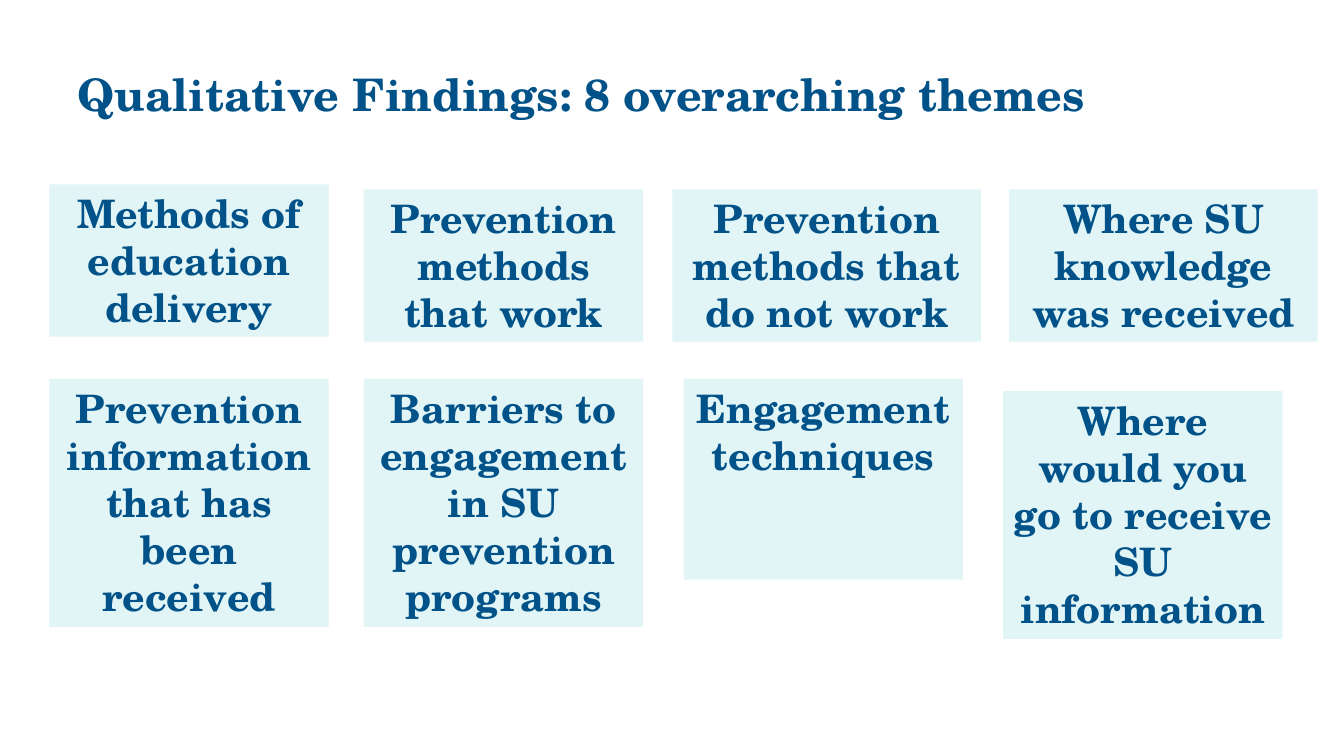
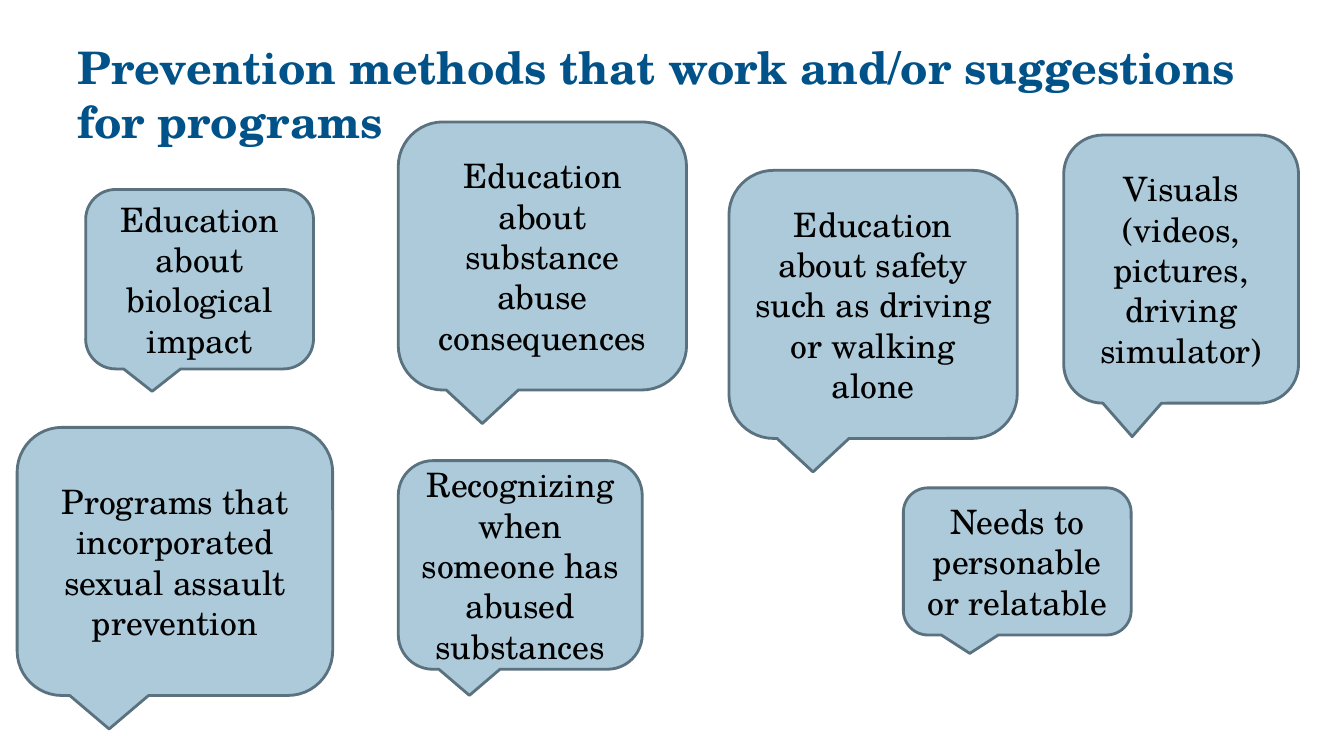
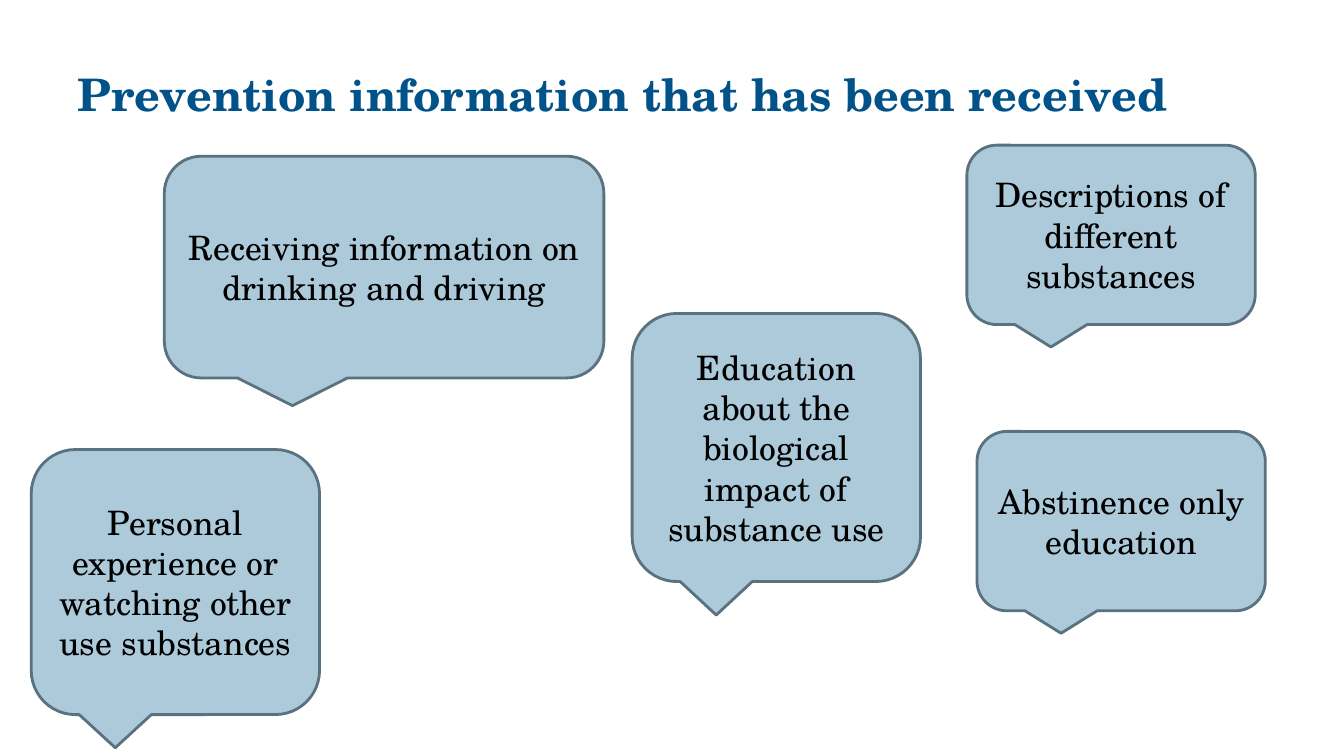
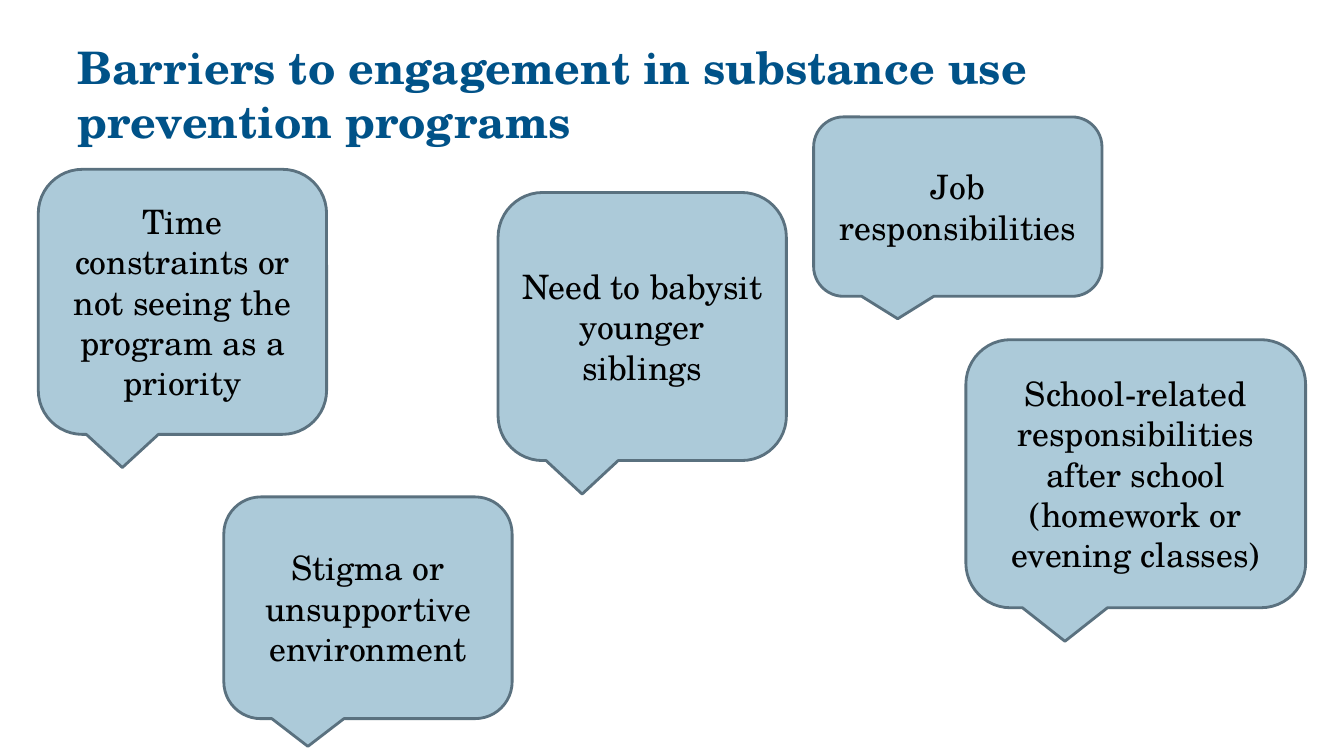
from dataclasses import dataclass

from pptx import Presentation
from pptx.dml.color import RGBColor
from pptx.enum import shapes, text
from pptx.util import Inches, Pt


@dataclass(frozen=True)
class Theme:
    font: str = "TeX Gyre Schola"
    navy: str = "005288"
    black: str = "000000"
    card_fill: str = "E1F4F6"
    bubble_fill: str = "ACCAD9"
    bubble_line: str = "5A717F"
    title_size: int = 32
    card_size: int = 28
    bubble_size: int = 24
    line_width: int = 2


THEME = Theme()
TITLE_BOX = (0.67, 0.3, 12, 1.25)

# Shared bubble sizes: width, height
STANDARD = (2.86, 2.66)
TALL = (2.86, 2.63)
MEDIUM = (2.86, 2.2)
SHORT = (2.86, 1.78)

# Shared card sizes: width, height
CARD = (2.77, 1.51)
WIDE_CARD = (3.06, 1.51)
TALL_CARD = (2.77, 2.46)

# Each slide: title, kind of shape, then (text, (left, top), (width, height))
SLIDES = [
    ("Qualitative Findings: 8 overarching themes", "card", [
        ("Methods of education delivery", (0.49, 1.83), CARD),
        ("Prevention methods that work", (3.61, 1.88), CARD),
        ("Prevention methods that do not work", (6.67, 1.88), WIDE_CARD),
        ("Where SU knowledge was received", (10.01, 1.88), WIDE_CARD),
        ("Prevention information that has been received", (0.49, 3.76), TALL_CARD),
        ("Barriers to engagement in SU prevention programs", (3.61, 3.76), TALL_CARD),
        ("Engagement techniques", (6.78, 3.76), (2.77, 1.99)),
        ("Where would you go to receive SU information", (9.95, 3.88), TALL_CARD),
    ]),
    ("Prevention methods that work and/or suggestions for programs", "bubble", [
        ("Education about substance abuse consequences", (3.95, 1.21), STANDARD),
        ("Education about biological impact", (0.85, 1.88), (2.26, 1.78)),
        ("Programs that incorporated sexual assault prevention", (0.17, 4.24), (3.13, 2.66)),
        ("Education about safety such as driving or walking alone", (7.23, 1.69), STANDARD),
        ("Recognizing when someone has abused substances", (3.95, 4.57), (2.42, 2.07)),
        ("Visuals (videos, pictures, driving simulator)", (10.55, 1.34), (2.33, 2.66)),
        ("Needs to personable or relatable", (8.96, 4.84), (2.26, 1.46)),
    ]),
    ("Prevention information that has been received", "bubble", [
        ("Receiving information on drinking and driving", (1.63, 1.55), (4.36, 2.2)),
        ("Personal experience or watching other use substances", (0.31, 4.46), TALL),
        ("Education about the biological impact of substance use", (6.27, 3.11), STANDARD),
        ("Descriptions of different substances", (9.59, 1.44), SHORT),
        ("Abstinence only education", (9.69, 4.28), SHORT),
    ]),
    ("Barriers to engagement in substance use prevention programs", "bubble", [
        ("Stigma or unsupportive environment", (2.22, 4.93), MEDIUM),
        ("Time constraints or not seeing the program as a priority", (0.38, 1.68), TALL),
        ("Need to babysit younger siblings", (4.94, 1.91), STANDARD),
        ("School-related responsibilities after school (homework or evening classes)",
         (9.58, 3.37), (3.37, 2.66)),
        ("Job responsibilities", (8.07, 1.16), SHORT),
    ]),
]

FORMATS = {
    "title": {"size": THEME.title_size, "color": THEME.navy, "bold": True,
              "align": text.PP_ALIGN.LEFT, "anchor": text.MSO_ANCHOR.MIDDLE},
    "card": {"size": THEME.card_size, "color": THEME.navy, "bold": True,
             "align": text.PP_ALIGN.CENTER, "anchor": text.MSO_ANCHOR.TOP},
    "bubble": {"size": THEME.bubble_size, "color": THEME.black, "bold": False,
               "align": text.PP_ALIGN.CENTER, "anchor": text.MSO_ANCHOR.MIDDLE},
}

# Preset shape, fill colour, line colour
OUTLINES = {
    "card": (shapes.MSO_SHAPE.RECTANGLE, THEME.card_fill, None),
    "bubble": (shapes.MSO_SHAPE.ROUNDED_RECTANGULAR_CALLOUT,
               THEME.bubble_fill, THEME.bubble_line),
}


def write(box, words, kind):
    style = FORMATS[kind]
    frame = box.text_frame
    frame.word_wrap = True
    frame.vertical_anchor = style["anchor"]
    para = frame.paragraphs[0]
    para.alignment = style["align"]
    span = para.add_run()
    span.text = words
    values = {"name": THEME.font, "size": Pt(style["size"]), "bold": style["bold"]}
    for name, value in values.items():
        setattr(span.font, name, value)
    span.font.color.rgb = RGBColor.from_string(style["color"])


def add_title(page, words):
    write(page.shapes.add_textbox(*map(Inches, TITLE_BOX)), words, "title")


def add_theme_shape(page, kind, words, position, size):
    """Add one card or speech bubble with its text."""
    preset, fill, line = OUTLINES[kind]
    shape = page.shapes.add_shape(preset, *map(Inches, position + size))
    shape.shadow.inherit = False
    shape.fill.solid()
    shape.fill.fore_color.rgb = RGBColor.from_string(fill)
    if line:
        shape.line.color.rgb = RGBColor.from_string(line)
        shape.line.width = Pt(THEME.line_width)
    else:
        shape.line.fill.background()
    write(shape, words, kind)


def main():
    deck = Presentation()
    deck.slide_width, deck.slide_height = Inches(13.33), Inches(7.5)
    blank = deck.slide_layouts[6]
    for title, kind, items in SLIDES:
        page = deck.slides.add_slide(blank)
        add_title(page, title)
        for words, position, size in items:
            add_theme_shape(page, kind, words, position, size)
    deck.save("out.pptx")


if __name__ == "__main__":
    main()
